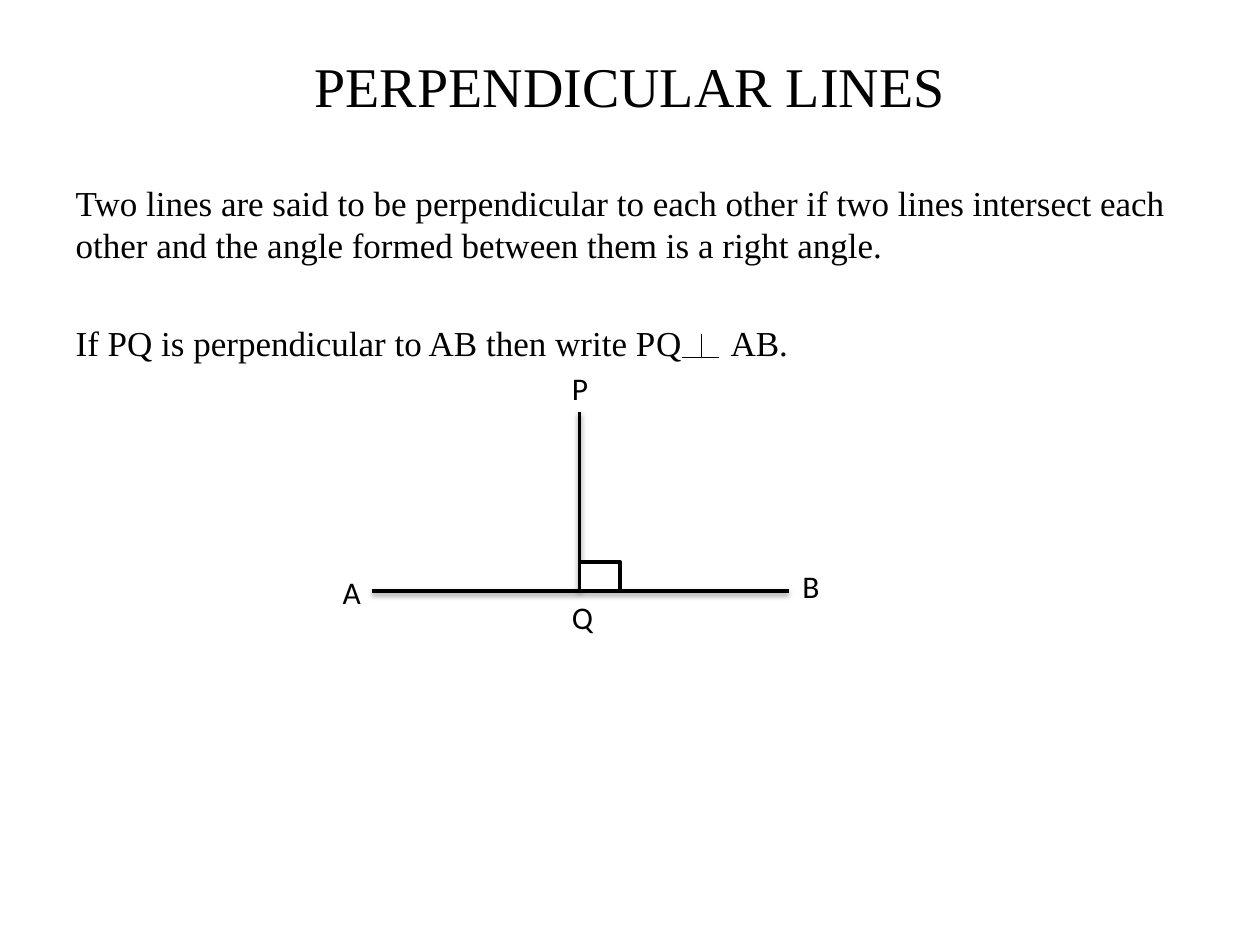
from lxml.etree import SubElement
from pptx import Presentation
from pptx.dml.color import RGBColor
from pptx.enum.shapes import MSO_CONNECTOR, MSO_SHAPE
from pptx.enum.text import MSO_ANCHOR, MSO_AUTO_SIZE, PP_ALIGN
from pptx.oxml.ns import qn
from pptx.util import Inches, Pt

BLACK = RGBColor(0, 0, 0)
WHITE = RGBColor(255, 255, 255)
SERIF = "Times New Roman"
SANS = "Calibri"
EM_SPACE = "\u2003"


def place(shape, left, top, width, height):
    shape.left, shape.top = Inches(left), Inches(top)
    shape.width, shape.height = Inches(width), Inches(height)


def add_run(paragraph, text, size, font_name, letter_spacing=0):
    run = paragraph.add_run()
    run.text = text
    run.font.size = Pt(size)
    run.font.name = font_name
    run.font.color.rgb = BLACK
    if letter_spacing:
        run._r.get_or_add_rPr().set("spc", str(letter_spacing * 100))


def fill_title(title, text):
    place(title, 0.5, 0.05, 9, 1.25)
    title.text_frame.vertical_anchor = MSO_ANCHOR.MIDDLE
    paragraph = title.text_frame.paragraphs[0]
    paragraph.alignment = PP_ALIGN.CENTER
    add_run(paragraph, text, 32, SERIF)


def remove_bullet(paragraph):
    properties = paragraph._p.get_or_add_pPr()
    properties.set("marL", "0")
    properties.set("indent", "0")
    SubElement(properties, qn("a:buNone"))


def fill_body(body):
    place(body, 0.5, 1.39, 9, 5.31)
    definition = body.text_frame.paragraphs[0]
    remove_bullet(definition)
    add_run(definition, "Two lines are said to be perpendicular to each other if two lines "
            "intersect each other and the angle formed between them is a right angle.", 20, SERIF)
    notation = body.text_frame.add_paragraph()
    notation.space_before = Pt(32)
    remove_bullet(notation)
    add_run(notation, "If PQ is perpendicular to AB then write P", 20, SERIF)
    add_run(notation, "Q" + EM_SPACE, 20, SERIF, letter_spacing=4)
    add_run(notation, "AB.", 20, SERIF)


def add_line(shapes, start, end, width, shadow=False):
    line = shapes.add_connector(MSO_CONNECTOR.STRAIGHT, *map(Inches, start + end))
    line.line.color.rgb = BLACK
    line.line.width = Pt(width)
    effects = SubElement(line._element.spPr, qn("a:effectLst"))
    if shadow:
        outer = SubElement(effects, qn("a:outerShdw"), blurRad=str(Pt(3.1)),
                           dist=str(Pt(1.6)), dir="5400000", rotWithShape="0")
        color = SubElement(outer, qn("a:srgbClr"), val=str(BLACK))
        SubElement(color, qn("a:alpha"), val="38000")


def add_perpendicular_symbol(slide):
    symbol = slide.shapes.add_group_shape()
    add_line(symbol.shapes, (5.57, 2.65), (5.57, 2.84), 0.75)
    add_line(symbol.shapes, (5.71, 2.84), (5.41, 2.84), 0.75)


def add_right_angle(slide, left, top, width, height):
    square = slide.shapes.add_shape(MSO_SHAPE.RECTANGLE, *map(Inches, (left, top, width, height)))
    square.shadow.inherit = False
    square.fill.solid()
    square.fill.fore_color.rgb = WHITE
    square.line.color.rgb = BLACK
    square.line.width = Pt(2)


def add_point_label(slide, text, left, top, width):
    label = slide.shapes.add_textbox(Inches(left), Inches(top), Inches(width), Inches(0.4))
    label.text_frame.word_wrap = False
    label.text_frame.auto_size = MSO_AUTO_SIZE.SHAPE_TO_FIT_TEXT
    add_run(label.text_frame.paragraphs[0], text, 18, SANS)


def main():
    presentation = Presentation()
    presentation.slide_width, presentation.slide_height = Inches(10), Inches(7.5)
    slide = presentation.slides.add_slide(presentation.slide_layouts[1])
    fill_title(slide.shapes.title, "PERPENDICULAR LINES")
    fill_body(slide.placeholders[1])
    add_perpendicular_symbol(slide)
    add_line(slide.shapes, (2.95, 4.69), (6.26, 4.69), 2, shadow=True)
    add_line(slide.shapes, (4.6, 4.69), (4.6, 3.27), 2, shadow=True)
    add_right_angle(slide, 4.6, 4.46, 0.32, 0.23)
    for text, left, top, width in (
        ("P", 4.44, 2.88, 0.33),
        ("B", 6.27, 4.45, 0.34),
        ("Q", 4.44, 4.7, 0.37),
        ("A", 2.62, 4.5, 0.35),
    ):
        add_point_label(slide, text, left, top, width)
    presentation.save("out.pptx")


main()
